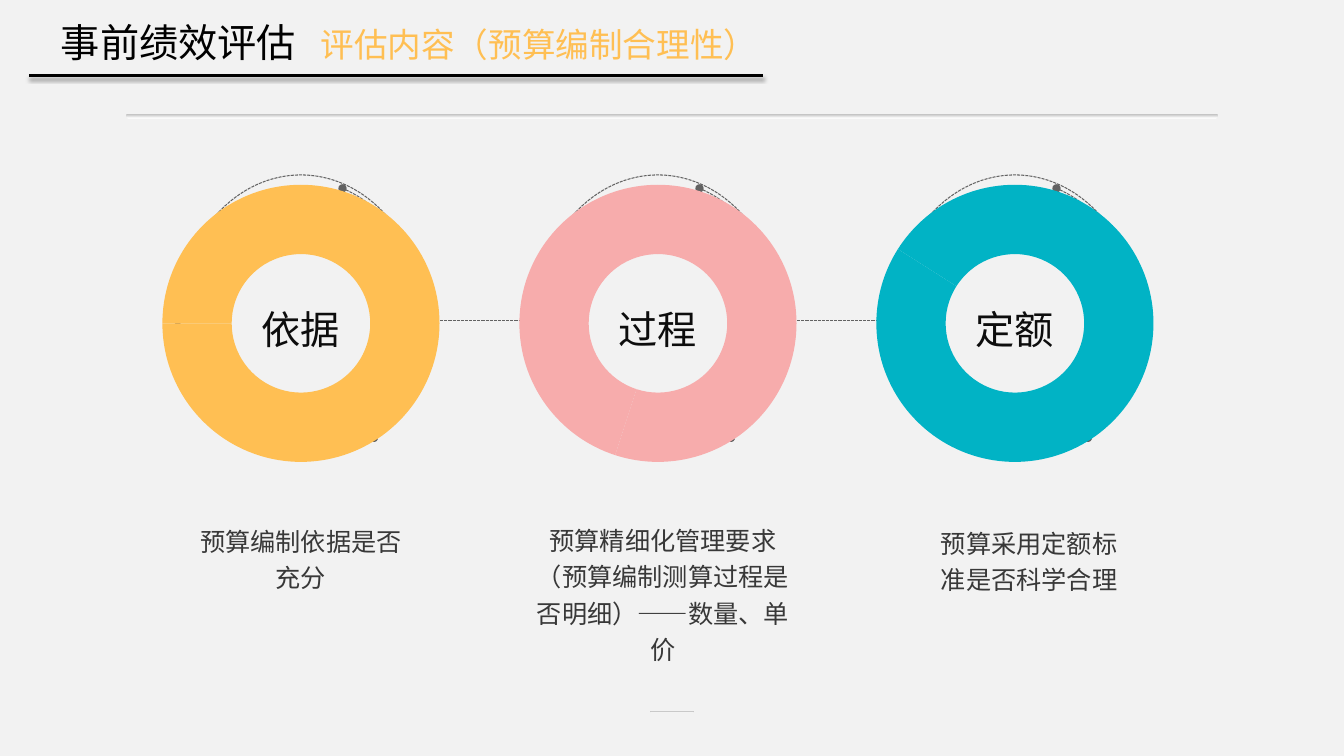
from dataclasses import dataclass

from pptx import Presentation
from pptx.chart.data import CategoryChartData
from pptx.dml.color import RGBColor
from pptx.enum.chart import XL_CHART_TYPE as ChartType
from pptx.enum.dml import MSO_LINE as Dash
from pptx.enum.shapes import MSO_CONNECTOR as Connector, MSO_SHAPE as Shape
from pptx.enum.text import MSO_AUTO_SIZE as AutoSize, PP_ALIGN as Align
from pptx.oxml import parse_xml
from pptx.oxml.ns import nsdecls, qn
from pptx.util import Pt


@dataclass(frozen=True)
class Theme:
    background: str = "F2F2F2"
    black: str = "000000"
    amber: str = "FFBF53"
    pink: str = "F7ACAC"
    teal: str = "01B3C5"
    dashes: str = "626262"
    rule_start: str = "BFBFBF"
    rule_end: str = "FFFFFF"
    label: str = "0D0D0D"
    caption: str = "383838"
    heading_size: int = 28
    subheading_size: int = 24
    caption_size: int = 18
    chart_size: int = 10
    font: str = "Noto Sans CJK SC"
    label_font: str = "Arial Narrow"
    chart_font: str = "Calibri"


THEME = Theme()
rgb = RGBColor.from_string

PITCH = 255
RING = 198
ARC_WIDTH, ARC_HEIGHT = 176, 208
CHART_WIDTH, CHART_HEIGHT = 277, 218

# label, colour, share, text, caption offset from ring centre, top, width, height
TOPICS = [
    ("依据", THEME.amber, 75, "预算编制依据是否充分", 0, 371.5, 149, 52.5),
    ("过程", THEME.pink, 55, "预算精细化管理要求（预算编制测算过程是否明细）——数量、单价",
     3.5, 371, 184, 104.5),
    ("定额", THEME.teal, 84, "预算采用定额标准是否科学合理", 10, 373, 137, 50.5),
]


def add_text(slide, box, runs, align=Align.CENTER, inset=0, wrap=True,
             line_spacing=None, space_before=0, tab=None):
    """Runs are (text, size, colour, font); tab is a left tab stop in points."""
    frame = slide.shapes.add_textbox(*map(Pt, box)).text_frame
    frame.word_wrap = wrap
    frame.auto_size = AutoSize.SHAPE_TO_FIT_TEXT
    frame.margin_left = frame.margin_right = Pt(inset)
    frame.margin_top = frame.margin_bottom = Pt(inset / 2)
    paragraph = frame.paragraphs[0]
    paragraph.alignment = align
    paragraph.space_before = Pt(space_before)
    if line_spacing:
        paragraph.line_spacing = line_spacing
    if tab:
        paragraph._p.get_or_add_pPr().append(parse_xml(
            f'<a:tabLst {nsdecls("a")}><a:tab pos="{Pt(tab)}" algn="l"/></a:tabLst>'))
    for text, size, colour, font in runs:
        run = paragraph.add_run()
        run.text = text
        run.font.size = Pt(size)
        run.font.color.rgb = rgb(colour)
        run.font.name = font
        run._r.rPr.find(qn("a:latin")).addnext(
            parse_xml(f'<a:ea {nsdecls("a")} typeface="{THEME.font}"/>'))


def add_line(slide, start, end, colour, width):
    line = slide.shapes.add_connector(Connector.STRAIGHT, *map(Pt, (*start, *end)))
    line.line.color.rgb = rgb(colour)
    line.line.width = Pt(width)
    effects = parse_xml(f'<a:effectLst {nsdecls("a")}/>')
    line._element.spPr.append(effects)
    return line, effects


def make_dashed(shape):
    """Give a line or arc its fine dashes and round ends."""
    shape.line.color.rgb = rgb(THEME.dashes)
    shape.line.width = Pt(0.75)
    shape.line.dash_style = Dash.SQUARE_DOT
    outline = shape._element.spPr.find(qn("a:ln"))
    for end in ("headEnd", "tailEnd"):
        outline.append(parse_xml(f'<a:{end} {nsdecls("a")} type="oval"/>'))


def add_rule(slide, box):
    rule = slide.shapes.add_shape(Shape.ROUNDED_RECTANGLE, *map(Pt, box))
    rule.adjustments[0] = 0.5
    rule.shadow.inherit = False
    rule.line.fill.background()
    rule.fill.gradient()
    rule.fill.gradient_angle = 270
    for stop, colour, position in zip(
            rule.fill.gradient_stops, (THEME.rule_start, THEME.rule_end), (0, 1)):
        stop.color.rgb = rgb(colour)
        stop.position = position


def add_title(slide, left, top, width, height):
    add_text(slide, (left + 22.5, top, width - 22.5, height), [
        ("事前绩效评估\t", THEME.heading_size, THEME.black, THEME.font),
        ("评估内容（预算编制合理性）", THEME.subheading_size, THEME.amber, THEME.font),
    ], align=Align.LEFT, tab=185.5)
    _, effects = add_line(slide, (left, top + height), (left + width, top + height),
                          THEME.black, 2)
    effects.append(parse_xml(
        f'<a:outerShdw {nsdecls("a")} blurRad="{Pt(3.1)}" dist="{Pt(1.6)}" dir="5400000">'
        f'<a:srgbClr val="{THEME.black}"><a:alpha val="38000"/></a:srgbClr></a:outerShdw>'))


def add_arc(slide, box, angles, flips):
    arc = slide.shapes.add_shape(Shape.ARC, *map(Pt, box))
    arc.shadow.inherit = False
    arc.fill.background()
    for index, degrees in enumerate(angles):
        arc.adjustments[index] = degrees * 0.6
    for flip in flips:
        arc._element.spPr.xfrm.set(flip, "1")
    make_dashed(arc)


def add_ring(slide, box, share, colour):
    data = CategoryChartData()
    data.categories = ["1", "2"]
    data.add_series("Series 1", (share, 100 - share))
    chart = slide.shapes.add_chart(ChartType.DOUGHNUT, *map(Pt, box), data).chart
    chart.has_legend = chart.has_title = False
    chart.font.size = Pt(THEME.chart_size)
    chart.font.name = THEME.chart_font
    chart.font.color.rgb = rgb(THEME.black)
    plot = chart.plots[0]
    plot.vary_by_categories = False
    for index in range(2):
        point = plot.series[0].points[index].format
        point.fill.solid()
        point.fill.fore_color.rgb = rgb(colour)
        point.line.fill.background()
    plot._element.find(qn("c:holeSize")).set("val", "70")
    area = plot._element.getparent()
    for layout in area.findall(qn("c:layout")):
        area.remove(layout)
    w, h = RING / box[2], RING / box[3]
    places = {"x": (1 - w) / 2, "y": (1 - h) / 2, "w": w, "h": h}
    modes = "".join(f'<c:{axis}Mode val="edge"/>' for axis in "xy")
    values = "".join(f'<c:{key} val="{value:.4f}"/>' for key, value in places.items())
    area.insert(0, parse_xml(
        f'<c:layout {nsdecls("c")}><c:manualLayout><c:layoutTarget val="inner"/>'
        f'{modes}{values}</c:manualLayout></c:layout>'))


def add_topic(slide, centre, middle, topic):
    label, colour, share, text, offset, top, width, height = topic
    arc_left, arc_top = centre - ARC_WIDTH / 2, middle - ARC_HEIGHT / 2
    add_arc(slide, (arc_left, arc_top - 2, ARC_WIDTH, ARC_HEIGHT),
            (121.84, 0), ("flipH",))
    add_arc(slide, (arc_left, arc_top + 1.5, ARC_WIDTH, ARC_HEIGHT),
            (106.84, 202.74), ("flipH", "flipV"))
    add_ring(slide, (centre - CHART_WIDTH / 2, middle - CHART_HEIGHT / 2,
                     CHART_WIDTH, CHART_HEIGHT), share, colour)
    add_text(slide, (centre - 35.5, middle - 23.5, 71, 44.5),
             [(label, THEME.heading_size, THEME.label, THEME.label_font)],
             inset=7.2, wrap=False, line_spacing=1.2)
    add_text(slide, (centre + offset - width / 2, top, width, height),
             [(text, THEME.caption_size, THEME.caption, THEME.font)],
             line_spacing=1.2, space_before=3)


def add_topics(slide, first_centre, middle):
    centres = [first_centre + PITCH * index for index in range(len(TOPICS))]
    for centre, following in zip(centres, centres[1:]):
        link, _ = add_line(slide, (centre + ARC_WIDTH / 2, middle - 2),
                           (following - ARC_WIDTH / 2, middle - 2), THEME.dashes, 0.75)
        make_dashed(link)
    for centre, topic in zip(centres, TOPICS):
        add_topic(slide, centre, middle, topic)


def main():
    deck = Presentation()
    deck.slide_width, deck.slide_height = Pt(960), Pt(540)
    slide = deck.slides.add_slide(deck.slide_layouts[6])
    slide.background.fill.solid()
    slide.background.fill.fore_color.rgb = rgb(THEME.background)
    add_rule(slide, (90, 81.5, 780, 3))
    add_rule(slide, (464.5, 508, 31, 1.2))
    add_title(slide, 21, 13, 524, 41)
    add_topics(slide, 215, 231)
    deck.save("out.pptx")


if __name__ == "__main__":
    main()
